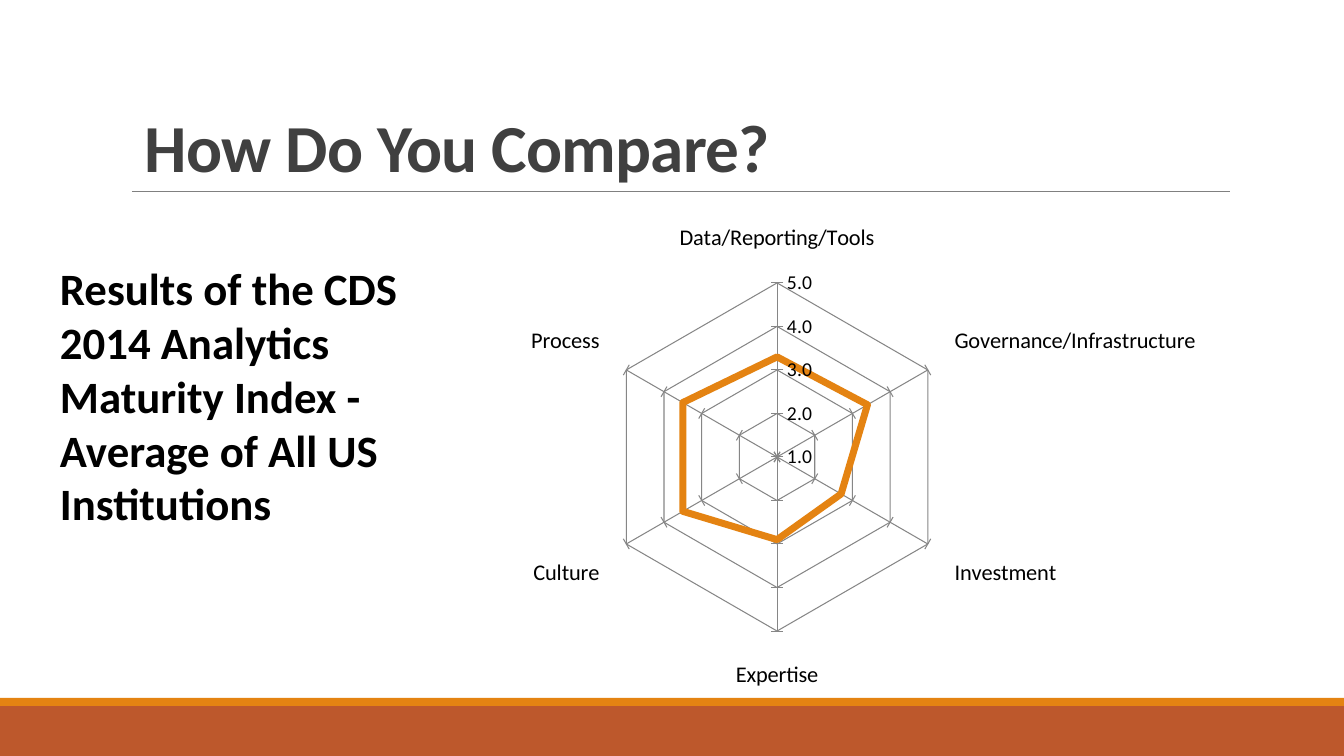
from lxml.etree import SubElement
from pptx import Presentation
from pptx.chart.data import CategoryChartData
from pptx.dml.color import RGBColor
from pptx.enum.chart import XL_CHART_TYPE, XL_TICK_LABEL_POSITION, XL_TICK_MARK
from pptx.enum.shapes import MSO_CONNECTOR, MSO_SHAPE
from pptx.enum.text import MSO_ANCHOR
from pptx.oxml.ns import qn
from pptx.util import Emu, Pt

COLORS = {"rust": "BD582C", "orange": "E48312", "rule": "808080",
          "grid": "868686", "title": "404040", "text": "000000"}
SLIDE_SIZE = (1344, 756)
BANDS = [("rust", (0, 706, 1344, 50)), ("orange", (0, 698, 1344, 8))]
RULE = (132, 191, 1230, 191)
TEXTS = [
    {"text": "How Do You Compare?", "box": (135, 31, 1109, 160), "size": 48,
     "color": "title", "anchor": MSO_ANCHOR.BOTTOM, "line_spacing": 0.85, "tracking": -50},
    {"text": "Results of the CDS 2014 Analytics Maturity Index - Average of All US Institutions",
     "box": (50, 256, 425, 281), "size": 32,
     "color": "text", "anchor": MSO_ANCHOR.TOP, "line_spacing": 1.0, "tracking": 0},
]
CHART_BOX = (309, 215, 1109, 484)
SCORES = {"Data/Reporting/Tools": 3.3, "Governance/Infrastructure": 3.4, "Investment": 2.7,
          "Expertise": 2.9, "Culture": 3.5, "Process": 3.5}
VALUE_AXIS = {"minimum_scale": 1, "maximum_scale": 5, "major_unit": 1,
              "major_tick_mark": XL_TICK_MARK.CROSS, "minor_tick_mark": XL_TICK_MARK.NONE,
              "tick_label_position": XL_TICK_LABEL_POSITION.NEXT_TO_AXIS}


def px(*lengths):
    return [Emu(round(length * 914400 / 100.8)) for length in lengths]


def color(name):
    return RGBColor.from_string(COLORS[name])


def set_all(target, values):
    for name, value in values.items():
        setattr(target, name, value)


def style_line(line, name, width):
    line.color.rgb = color(name)
    line.width = Pt(width)


def style_font(font, size, name, bold=False):
    set_all(font, {"name": "Calibri", "size": Pt(size), "bold": bold})
    font.color.rgb = color(name)


def add_band(slide, name, box):
    shape = slide.shapes.add_shape(MSO_SHAPE.RECTANGLE, *px(*box))
    shape.shadow.inherit = False
    shape.fill.solid()
    shape.fill.fore_color.rgb = color(name)
    shape.line.fill.background()


def add_rule(slide):
    connector = slide.shapes.add_connector(MSO_CONNECTOR.STRAIGHT, *px(*RULE))
    style_line(connector.line, "rule", 0.5)
    SubElement(connector._element.spPr, qn("a:effectLst"))


def add_text(slide, item):
    frame = slide.shapes.add_textbox(*px(*item["box"])).text_frame
    set_all(frame, {"word_wrap": True, "vertical_anchor": item["anchor"]})
    paragraph = frame.paragraphs[0]
    paragraph.line_spacing = item["line_spacing"]
    run = paragraph.add_run()
    run.text = item["text"]
    style_font(run.font, item["size"], item["color"], True)
    if item["tracking"]:
        run._r.get_or_add_rPr().set("spc", str(item["tracking"]))


def add_radar(slide):
    data = CategoryChartData(number_format="0.0")
    data.categories = list(SCORES)
    data.add_series("Series 1", list(SCORES.values()))
    chart = slide.shapes.add_chart(XL_CHART_TYPE.RADAR, *px(*CHART_BOX), data).chart
    set_all(chart, {"has_title": False, "has_legend": False})
    style_font(chart.font, 10, "text")
    plot = chart.plots[0]
    plot.vary_by_categories = False
    series = plot.series[0]
    series.smooth = False
    style_line(series.format.line, "orange", 5)
    set_all(chart.value_axis, VALUE_AXIS)
    set_all(chart.value_axis.tick_labels, {"number_format": "0.0", "number_format_is_linked": False})
    chart.category_axis.major_tick_mark = XL_TICK_MARK.OUTSIDE
    for axis, size in ((chart.category_axis, 16), (chart.value_axis, 14)):
        axis.has_major_gridlines = True
        style_font(axis.tick_labels.font, size, "text")
        style_line(axis.format.line, "grid", 0.75)
        style_line(axis.major_gridlines.format.line, "grid", 0.75)


def main():
    presentation = Presentation()
    presentation.slide_width, presentation.slide_height = px(*SLIDE_SIZE)
    slide = presentation.slides.add_slide(presentation.slide_layouts[6])
    for name, box in BANDS:
        add_band(slide, name, box)
    add_rule(slide)
    add_radar(slide)
    for item in TEXTS:
        add_text(slide, item)
    presentation.save("out.pptx")


if __name__ == "__main__":
    main()
